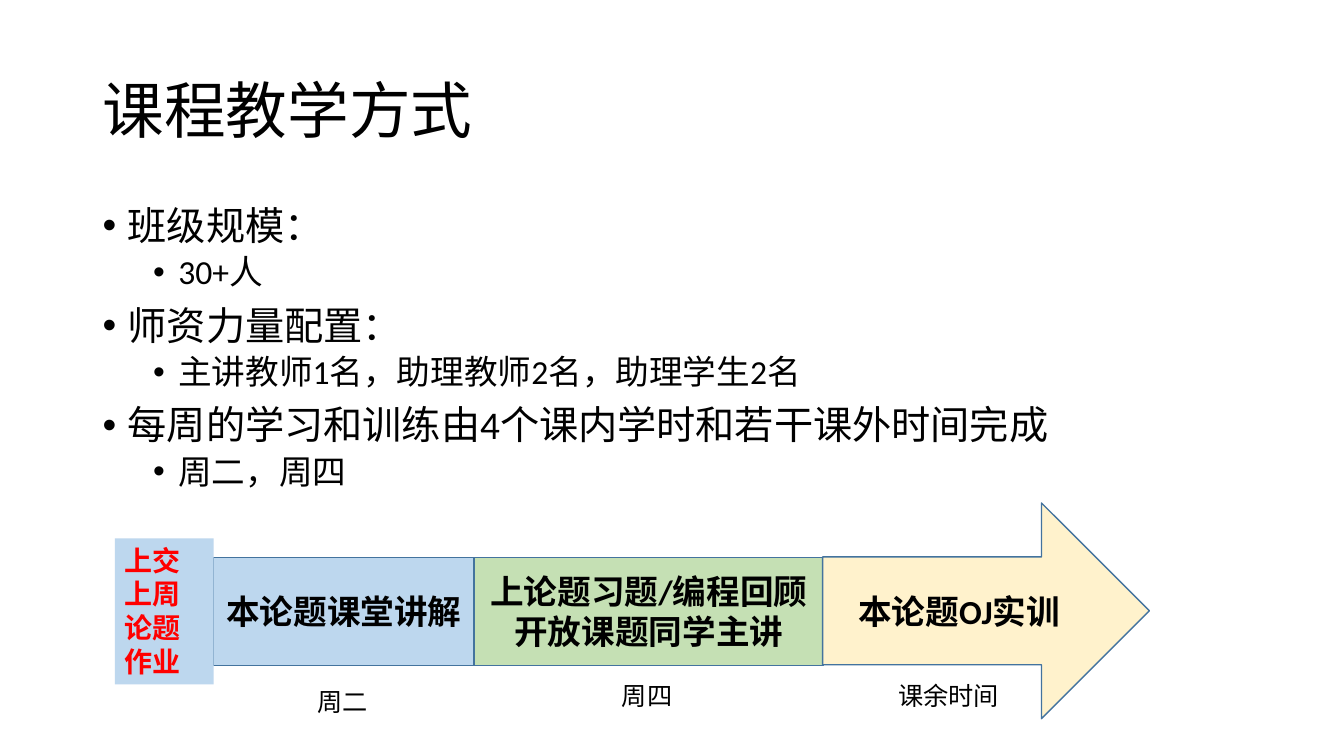
from dataclasses import dataclass

from lxml.etree import SubElement
from pptx import Presentation
from pptx.dml.color import RGBColor
from pptx.enum.shapes import MSO_SHAPE as Preset
from pptx.enum.text import MSO_ANCHOR as Anchor, MSO_AUTO_SIZE as AutoSize, PP_ALIGN as Align
from pptx.oxml.ns import qn
from pptx.shapes.autoshape import Shape
from pptx.slide import Slide
from pptx.text.text import TextFrame
from pptx.util import Inches, Pt

FONT = "Calibri"
BLACK, RED = "000000", "FF0000"
BLUE, GREEN, CREAM, OUTLINE = "BDD7EE", "C5E0B4", "FFF2CC", "43739E"


@dataclass
class Bullet:
    text: str
    level: int = 0


@dataclass
class Block:
    text: str
    left: float
    top: float
    width: float
    height: float
    fill: str
    preset: Preset = Preset.RECTANGLE
    outline: str | None = OUTLINE


@dataclass
class Caption:
    text: str
    left: float
    top: float
    width: float


BULLETS = [
    Bullet("班级规模："),
    Bullet("30+人", 1),
    Bullet("师资力量配置："),
    Bullet("主讲教师1名，助理教师2名，助理学生2名", 1),
    Bullet("每周的学习和训练由4个课内学时和若干课外时间完成"),
    Bullet("周二，周四", 1),
]
STAGES = [
    Block("本论题课堂讲解", 2.12, 5.53, 2.58, 1.07, BLUE),
    Block("上论题习题/编程回顾开放课题同学主讲", 4.7, 5.53, 3.47, 1.07, GREEN),
    Block("本论题OJ实训", 8.16, 4.99, 3.24, 2.14, CREAM, Preset.RIGHT_ARROW),
]
HOMEWORK = Block("上交上周论题作业", 1.14, 5.34, 0.98, 1.45, BLUE, outline=None)
CAPTIONS = [
    Caption("周二", 3.05, 6.76, 0.71),
    Caption("周四", 6.07, 6.7, 0.71),
    Caption("课余时间", 8.81, 6.7, 1.21),
]


def color(value: str) -> RGBColor:
    return RGBColor.from_string(value)


def write(frame: TextFrame, text: str, *, size: float, ink: str = BLACK, bold: bool = False,
          align: Align = Align.LEFT, spacing: float = 1.0, before: float = 0,
          bullet_level: int | None = None) -> None:
    """Fill the empty first paragraph, or add a paragraph after the others."""
    first = frame.paragraphs[0]
    para = frame.add_paragraph() if first.runs else first
    para.alignment = align
    para.line_spacing = spacing
    para.space_before = Pt(before)
    if bullet_level is not None:
        para.level = bullet_level
        properties = para._p.get_or_add_pPr()
        properties.set("marL", str(Inches(0.25 + 0.5 * bullet_level)))
        properties.set("indent", str(Inches(-0.25)))
        SubElement(properties, qn("a:buFont"), typeface="Arial")
        SubElement(properties, qn("a:buChar"), char="•")
    span = para.add_run()
    span.text = text
    span.font.name = FONT
    span.font.size = Pt(size)
    span.font.bold = bold
    span.font.color.rgb = color(ink)


def add_text_box(page: Slide, left: float, top: float, width: float, height: float,
                 *, wrap: bool = True, anchor: Anchor = Anchor.TOP) -> TextFrame:
    box = page.shapes.add_textbox(Inches(left), Inches(top), Inches(width), Inches(height))
    frame = box.text_frame
    frame.word_wrap = wrap
    frame.vertical_anchor = anchor
    return frame


def add_block(page: Slide, block: Block) -> Shape:
    shape = page.shapes.add_shape(block.preset, Inches(block.left), Inches(block.top),
                                  Inches(block.width), Inches(block.height))
    shape.shadow.inherit = False
    shape.fill.solid()
    shape.fill.fore_color.rgb = color(block.fill)
    if block.outline:
        shape.line.color.rgb = color(block.outline)
        shape.line.width = Pt(1)
    else:
        shape.line.fill.background()
    shape.text_frame.word_wrap = True
    return shape


def main() -> None:
    deck = Presentation()
    deck.slide_width, deck.slide_height = Inches(13.33), Inches(7.5)
    page = deck.slides.add_slide(deck.slide_layouts[6])

    # Title
    title = add_text_box(page, 0.92, 0.4, 11.5, 1.45, anchor=Anchor.MIDDLE)
    write(title, "课程教学方式", size=44, spacing=0.9)

    # Bullet list
    body = add_text_box(page, 0.92, 2, 11.5, 4.76)
    for bullet in BULLETS:
        write(body, bullet.text, size=28 - 4 * bullet.level, spacing=0.9,
              before=10 - 5 * bullet.level, bullet_level=bullet.level)

    # Weekly stages
    for stage in STAGES:
        frame = add_block(page, stage).text_frame
        frame.vertical_anchor = Anchor.MIDDLE
        write(frame, stage.text, size=24, bold=True, align=Align.CENTER)

    # Times below the stages
    for caption in CAPTIONS:
        frame = add_text_box(page, caption.left, caption.top, caption.width, 0.4, wrap=False)
        frame.auto_size = AutoSize.SHAPE_TO_FIT_TEXT
        write(frame, caption.text, size=18)

    # Homework due at the start
    frame = add_block(page, HOMEWORK).text_frame
    frame.vertical_anchor = Anchor.TOP
    frame.auto_size = AutoSize.SHAPE_TO_FIT_TEXT
    write(frame, HOMEWORK.text, size=20, ink=RED, bold=True)

    deck.save("out.pptx")


if __name__ == "__main__":
    main()
